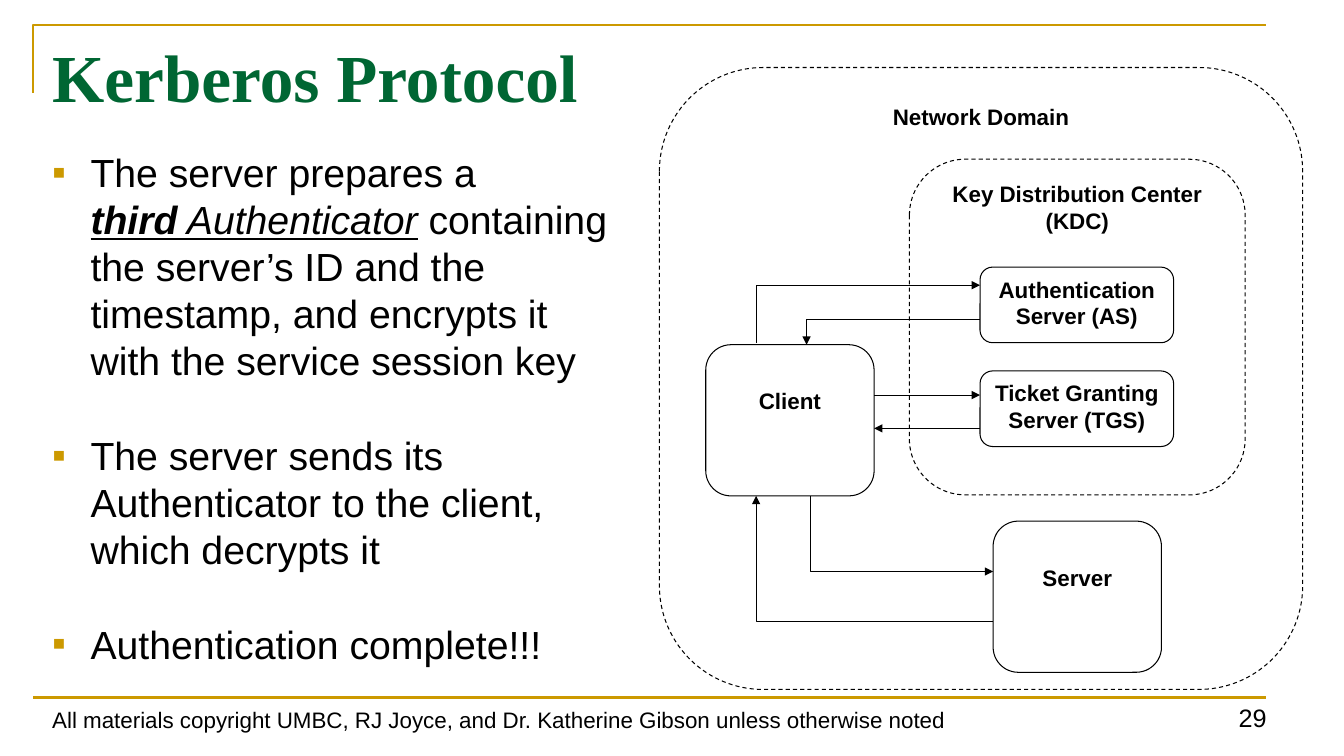
from lxml import etree
from pptx import Presentation
from pptx.dml.color import RGBColor
from pptx.enum.dml import MSO_LINE
from pptx.enum.shapes import MSO_CONNECTOR, MSO_SHAPE
from pptx.enum.text import MSO_ANCHOR, PP_ALIGN
from pptx.oxml.ns import qn
from pptx.util import Inches, Pt

STRAIGHT, ELBOW = MSO_CONNECTOR.STRAIGHT, MSO_CONNECTOR.ELBOW
ROUNDED = MSO_SHAPE.ROUNDED_RECTANGLE
DASH = MSO_LINE.DASH
TOP, BOTTOM = MSO_ANCHOR.TOP, MSO_ANCHOR.BOTTOM
LEFT, CENTER, RIGHT = PP_ALIGN.LEFT, PP_ALIGN.CENTER, PP_ALIGN.RIGHT

COLORS = {"gold": "CC9900", "green": "006633", "black": "000000"}


def style_font(font, size, color="black", name="Arial", bold=False):
    font.size, font.name, font.bold = Pt(size), name, bold
    font.color.rgb = RGBColor.from_string(COLORS[color])


def add_line(kind, start, end, color, width):
    line = page.shapes.add_connector(kind, *(Inches(v) for v in start + end))
    line.line.color.rgb = RGBColor.from_string(COLORS[color])
    line.line.width = Pt(width)
    etree.SubElement(line._element.spPr, qn("a:effectLst"))
    return line


deck = Presentation()
deck.slide_width, deck.slide_height = Inches(13.33), Inches(7.5)
page = deck.slides.add_slide(deck.slide_layouts[6])

# Gold frame: corner at the top, rule at the bottom
builder = page.shapes.build_freeform(Inches(0.33), Inches(0.92), scale=1.0)
builder.add_line_segments(
    [(Inches(0.33), Inches(0.25)), (Inches(12.56), Inches(0.25))], close=False)
corner = builder.convert_to_shape()
corner.shadow.inherit = False
corner.fill.background()
corner.line.color.rgb = RGBColor.from_string(COLORS["gold"])
corner.line.width = Pt(1.5)
add_line(STRAIGHT, (0.33, 6.92), (12.56, 6.92), "gold", 1.5)

# Title, copyright line and page number
texts = [
    ("All materials copyright UMBC, RJ Joyce, and Dr. Katherine Gibson unless otherwise noted",
     (0.42, 6.83, 10.33, 0.49), BOTTOM, LEFT, (16,)),
    ("29", (11.22, 6.83, 1.44, 0.49), BOTTOM, RIGHT, (18,)),
    ("Kerberos Protocol", (0.42, 0.3, 12.24, 1.11), TOP, LEFT,
     (48, "green", "Times New Roman", True)),
]
for text, place, anchor, align, look in texts:
    box = page.shapes.add_textbox(*(Inches(v) for v in place))
    frame = box.text_frame
    frame.word_wrap = True
    frame.vertical_anchor = anchor
    frame.text = text
    frame.paragraphs[0].alignment = align
    style_font(frame.paragraphs[0].runs[0].font, *look)

# Bullets: each is a list of (text, bold, italic and underlined)
bullets = [
    [("The server prepares a \n", False, False),
     ("third", True, True),
     (" Authenticator", False, True),
     (" containing the server’s ID and the timestamp, and encrypts it "
      "with the service session key", False, False)],
    [("The server sends its Authenticator to the client, which decrypts it", False, False)],
    [("Authentication complete!!!", False, False)],
]
body = page.shapes.add_textbox(Inches(0.42), Inches(1.42), Inches(5.77), Inches(5.28))
frame = body.text_frame
frame.word_wrap = True
for number, spans in enumerate(bullets):
    paragraph = frame.add_paragraph() if number else frame.paragraphs[0]
    properties = paragraph._p.get_or_add_pPr()
    properties.set("marL", str(Inches(0.38)))
    properties.set("indent", str(-Inches(0.38)))
    if number:
        paragraph.space_before = Pt(34)
    bullet_color = etree.SubElement(properties, qn("a:buClr"))
    etree.SubElement(bullet_color, qn("a:srgbClr"), val=COLORS["gold"])
    etree.SubElement(properties, qn("a:buFont"), typeface="Arial")
    etree.SubElement(properties, qn("a:buChar"), char="▪")
    for text, bold, marked in spans:
        span = paragraph.add_run()
        span.text = text.rstrip("\n")
        style_font(span.font, 28, bold=bold)
        span.font.italic = span.font.underline = marked
        if text.endswith("\n"):
            paragraph.add_line_break()

# Diagram boxes: label, place, outline dashed, top inset
nodes = [
    ("Key Distribution Center (KDC)", (9.02, 1.58, 3.33, 3.33), True, 0.05),
    ("Authentication Server (AS)", (9.72, 2.65, 1.92, 0.75), False, 0.05),
    ("Ticket Granting Server (TGS)", (9.72, 3.68, 1.92, 0.75), False, 0.05),
    ("Client", (7, 3.42, 1.67, 1.5), False, 0.35),
    ("Server", (9.85, 5.17, 1.67, 1.5), False, 0.35),
    ("Network Domain", (6.54, 0.67, 6.38, 6.17), True, 0.05),
]
for label, place, dashed, inset in nodes:
    node = page.shapes.add_shape(ROUNDED, *(Inches(v) for v in place))
    node.shadow.inherit = False
    node.fill.background()
    node.line.color.rgb = RGBColor.from_string(COLORS["black"])
    node.line.width = Pt(0.75)
    if dashed:
        node.line.dash_style = DASH
    frame = node.text_frame
    frame.word_wrap = True
    frame.vertical_anchor = TOP
    frame.margin_top = Inches(inset)
    frame.text = label
    frame.paragraphs[0].alignment = CENTER
    style_font(frame.paragraphs[0].runs[0].font, 16, bold=True)

# Message arrows: start, end, position of the bend (None for straight)
arrows = [
    ((7.5, 3.4), (9.72, 2.83), 0),
    ((9.72, 3.17), (8, 3.42), 100000),
    ((8.67, 3.92), (9.72, 3.92), None),
    ((9.72, 4.25), (8.67, 4.25), None),
    ((8.04, 4.92), (9.85, 5.67), 0),
    ((9.85, 6.17), (7.5, 4.92), 100000),
]
for start, end, bend in arrows:
    arrow = add_line(STRAIGHT if bend is None else ELBOW, start, end, "black", 0.75)
    etree.SubElement(arrow.line._get_or_add_ln(), qn("a:tailEnd"), type="triangle")
    if bend is not None:
        adjustments = arrow._element.spPr.find(qn("a:prstGeom")).find(qn("a:avLst"))
        etree.SubElement(adjustments, qn("a:gd"), name="adj1", fmla=f"val {bend}")

deck.save("out.pptx")
